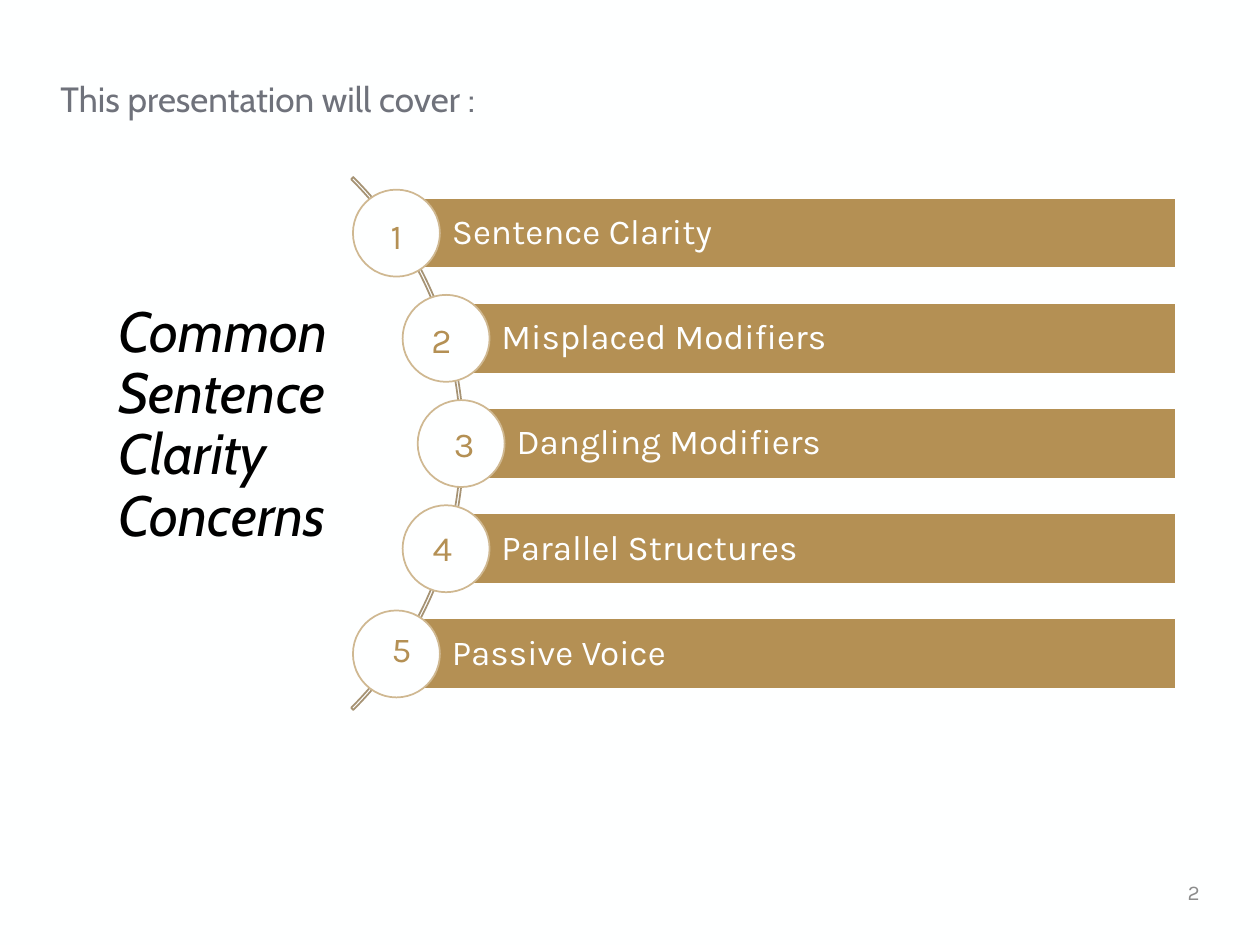
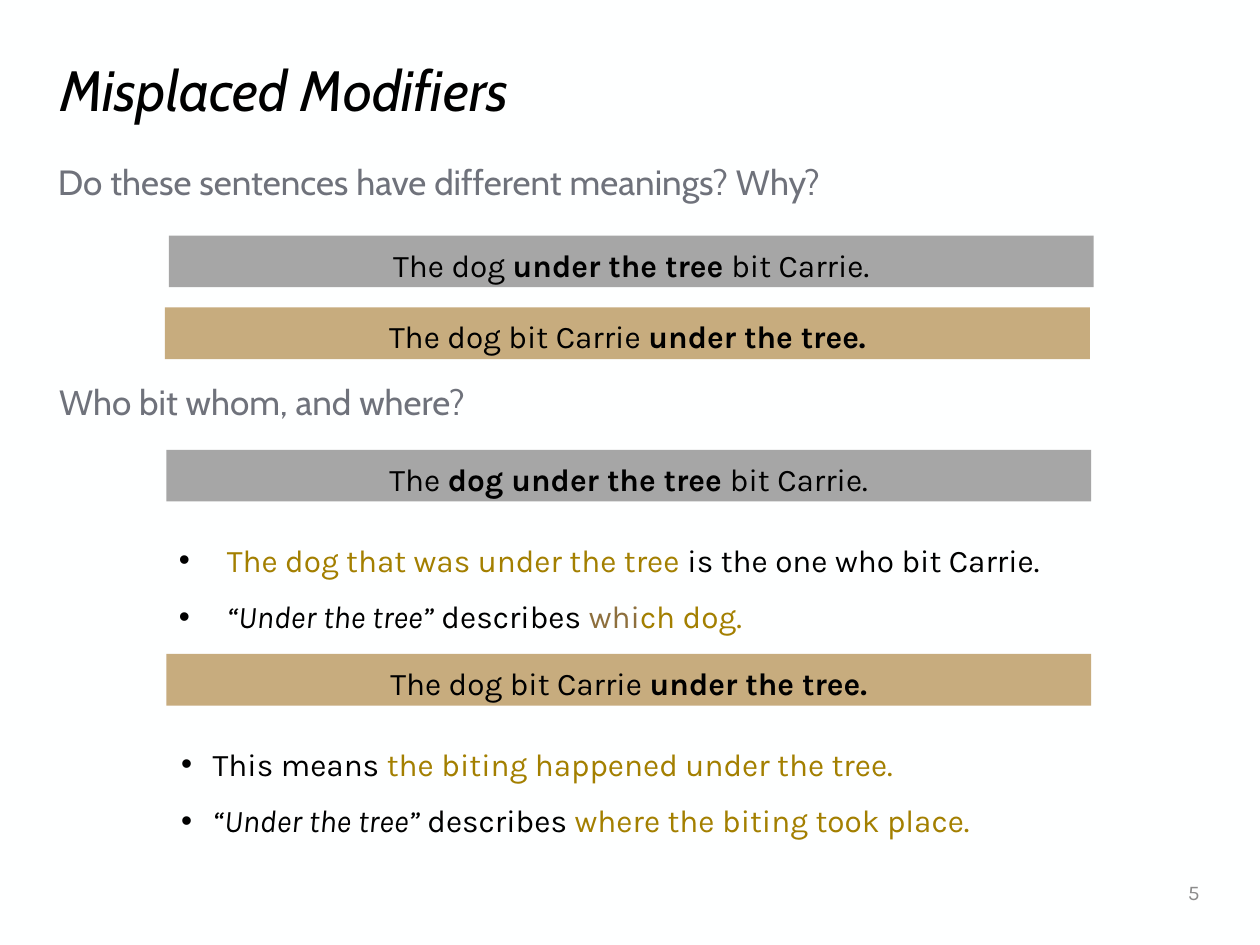
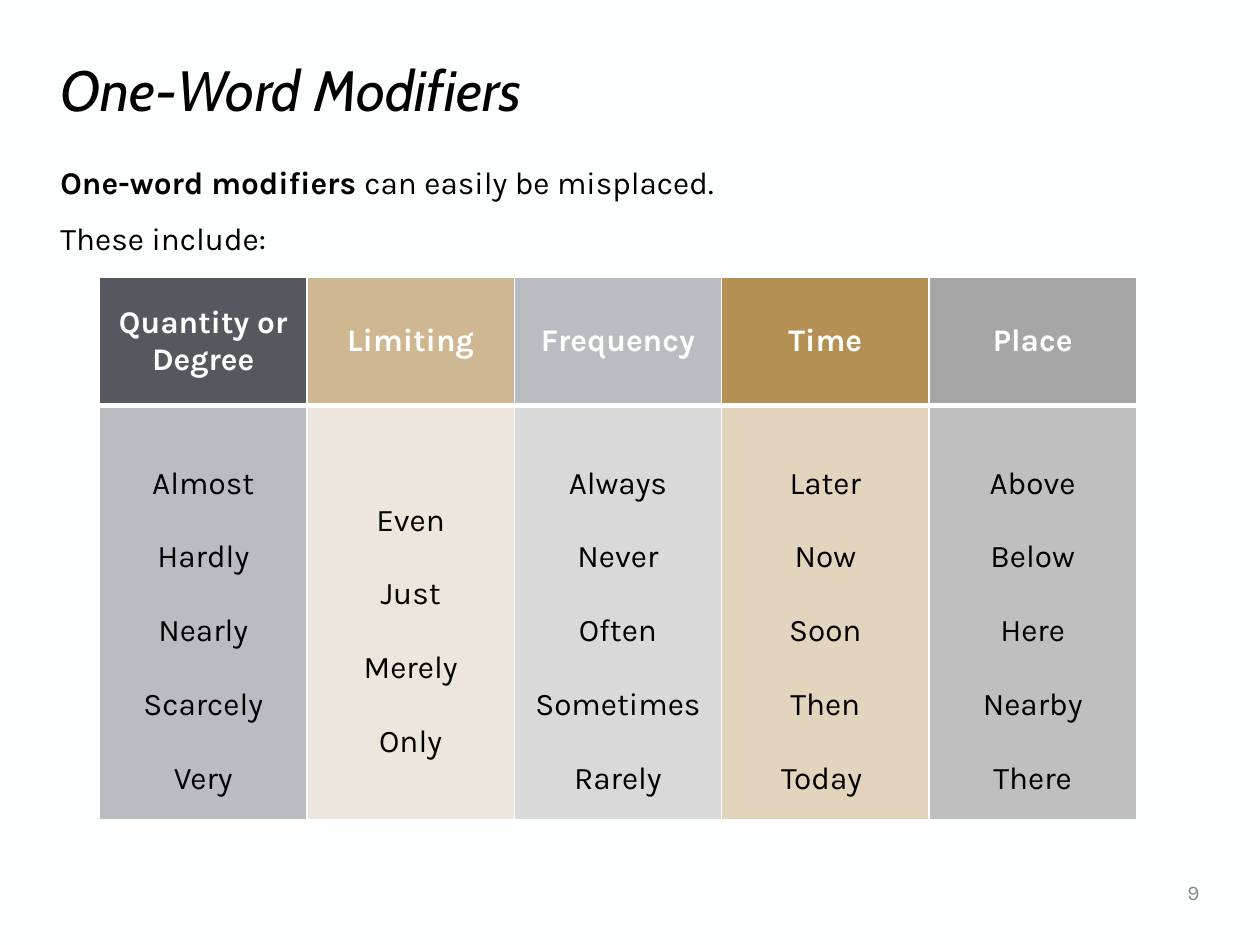
from dataclasses import dataclass
from math import sqrt

from lxml.etree import SubElement
from pptx import Presentation
from pptx.dml.color import RGBColor
from pptx.enum.shapes import MSO_SHAPE
from pptx.enum.text import MSO_ANCHOR, MSO_AUTO_SIZE, PP_ALIGN
from pptx.oxml import parse_xml
from pptx.oxml.ns import nsdecls, qn
from pptx.util import Inches, Pt


@dataclass(frozen=True)
class Theme:
    heading_font: str = "Cabin"
    text_font: str = "Karla"
    paper: str = "FEFFFF"
    ink: str = "000000"
    slate: str = "6F727B"
    footer: str = "8C8C8C"
    gold: str = "B49054"
    pale_gold: str = "CFB891"
    sand: str = "C7AC7E"
    grey: str = "A6A6A6"
    arc: str = "A69374"
    accent: str = "A37F00"
    brown: str = "8D6F3D"
    title_size: float = 32.4
    lead_size: float = 20
    text_size: float = 18
    footer_size: float = 12


THEME = Theme()
TITLE_BOX = (0.38, 0.42, 9.24, 0.64)
BOLD = {"bold": True}
ITALIC = {"italic": True}
ACCENT = {"color": THEME.accent}

# Looks of the recurring kinds of paragraph
TITLE = dict(font=THEME.heading_font, size=THEME.title_size, italic=True, spacing=0.9)
LEAD = dict(font=THEME.heading_font, size=THEME.lead_size, color=THEME.slate, spacing=0.9)
TEXT = dict(font=THEME.text_font, size=THEME.text_size)
LABEL = dict(font=THEME.text_font, size=THEME.lead_size)


# ---- Shared helpers ----
def style_font(font, color=None, bold=None, italic=None):
    if color:
        font.color.rgb = RGBColor.from_string(color)
    if bold is not None:
        font.bold = bold
    if italic is not None:
        font.italic = italic


def set_bullet(para, indent):
    props = para._p.get_or_add_pPr()
    props.set("marL", str(Inches(indent)))
    props.set("indent", str(-Inches(indent)))
    if indent:
        color = SubElement(props, qn("a:buClr"))
        SubElement(color, qn("a:srgbClr"), val=THEME.ink)
        SubElement(props, qn("a:buFont"), typeface="Arial")
        SubElement(props, qn("a:buChar"), char="•")
    else:
        SubElement(props, qn("a:buNone"))


def write(frame, paragraphs, font, size, color=THEME.ink, bold=False, italic=False,
          spacing=1.0, align=PP_ALIGN.LEFT, indent=0):
    """Each paragraph is a string or a list of strings and (text, style) pairs."""
    for index, content in enumerate(paragraphs):
        para = frame.add_paragraph() if index else frame.paragraphs[0]
        para.alignment = align
        para.line_spacing = spacing
        para.space_before = Pt(0)
        set_bullet(para, indent)
        para.font.name = font
        para.font.size = Pt(size)
        style_font(para.font, color, bold, italic)
        for piece in [content] if isinstance(content, str) else content:
            text, style = (piece, {}) if isinstance(piece, str) else piece
            span = para.add_run()
            span.text = text
            style_font(span.font, **style)


def place(shape, box):
    shape.left, shape.top, shape.width, shape.height = map(Inches, box)


def set_frame(frame, anchor=MSO_ANCHOR.TOP):
    frame.word_wrap = True
    frame.auto_size = MSO_AUTO_SIZE.NONE
    frame.vertical_anchor = anchor


def fill_placeholder(shape, box, paragraphs, look, anchor=MSO_ANCHOR.TOP):
    place(shape, box)
    set_frame(shape.text_frame, anchor)
    write(shape.text_frame, paragraphs, **look)


def add_text(page, box, paragraphs, look, anchor=MSO_ANCHOR.TOP):
    frame = page.shapes.add_textbox(*map(Inches, box)).text_frame
    set_frame(frame, anchor)
    write(frame, paragraphs, **look)


def add_flat_shape(page, kind, box, fill=None, line=None):
    shape = page.shapes.add_shape(kind, *map(Inches, box))
    shape.shadow.inherit = False
    if fill:
        shape.fill.solid()
        shape.fill.fore_color.rgb = RGBColor.from_string(fill)
    else:
        shape.fill.background()
    if line:
        shape.line.color.rgb = RGBColor.from_string(line)
        shape.line.width = Pt(1)
    else:
        shape.line.fill.background()
    return shape


def add_page(deck, layout, title, number, title_box=TITLE_BOX):
    page = deck.slides.add_slide(deck.slide_layouts.get_by_name(layout))
    fill_placeholder(page.shapes.title, title_box, [title], TITLE, MSO_ANCHOR.MIDDLE)
    add_text(page, (8.42, 6.88, 1.2, 0.4), [number],
             dict(font=THEME.text_font, size=THEME.footer_size, color=THEME.footer,
                  align=PP_ALIGN.RIGHT), MSO_ANCHOR.MIDDLE)
    return page


# ---- Overview ----
def add_topic_arc(page, center_x, center_y, radius, right, topics):
    """Bars start on an arc, each headed by a numbered circle."""
    pitch, bar_height, circle = 0.835, 0.56, 0.69
    outer = radius + 0.02
    arc = add_flat_shape(page, MSO_SHAPE.BLOCK_ARC,
                         (center_x - outer, center_y - outer, 2 * outer, 2 * outer),
                         line=THEME.arc)
    for index, value in enumerate((189, 27, 0.004)):
        arc.adjustments[index] = value

    for index, (topic, shift_x, shift_y) in enumerate(topics):
        rise = (index - (len(topics) - 1) / 2) * pitch
        x, y = center_x + sqrt(radius ** 2 - rise ** 2), center_y + rise
        bar = add_flat_shape(page, MSO_SHAPE.RECTANGLE,
                             (x, y - bar_height / 2, right - x, bar_height),
                             THEME.gold, THEME.paper)
        set_frame(bar.text_frame, MSO_ANCHOR.MIDDLE)
        bar.text_frame.margin_left = Inches(0.44)
        write(bar.text_frame, [topic], **LABEL, color=THEME.paper, spacing=0.9)
        left, top = x - circle / 2, y - circle / 2
        add_flat_shape(page, MSO_SHAPE.OVAL, (left, top, circle, circle),
                       THEME.paper, THEME.pale_gold)
        add_text(page, (left + shift_x, top + shift_y, 0.34, 0.44), [str(index + 1)],
                 dict(LABEL, color=THEME.gold))


def build_overview(deck):
    page = add_page(deck, "Title and Content", "Common Sentence Clarity Concerns", "2",
                    (0.84, 3.06, 2.15, 0.64))
    fill_placeholder(page.placeholders[1], (0.38, 0.6, 9.25, 0.4),
                     ["This presentation will cover :"], LEAD)
    # Topic, then the offset of its number inside the circle
    add_topic_arc(page, 0.69, 3.52, 2.97, 9.33, [
        ("Sentence Clarity", 0.2, 0.15),
        ("Misplaced Modifiers", 0.13, 0.14),
        ("Dangling Modifiers", 0.19, 0.13),
        ("Parallel Structures", 0.14, 0.12),
        ("Passive Voice", 0.21, 0.09),
    ])


# ---- Misplaced modifiers ----
def build_misplaced(deck):
    page = add_page(deck, "Two Content", "Misplaced Modifiers", "5")
    fill_placeholder(page.placeholders[1], (0.36, 1.22, 9.25, 0.48),
                     ["Do these sentences have different meanings? Why?"],
                     dict(LEAD, spacing=1.0))
    add_text(page, (0.37, 3.01, 9.25, 0.4), ["Who bit whom, and where?"], LEAD)

    # Example sentences
    bit_under = ["The dog bit Carrie ", ("under the tree.", BOLD)]
    examples = [
        (1.34, 1.87, THEME.grey, ["The dog ", ("under the tree ", BOLD), "bit Carrie."]),
        (1.31, 2.44, THEME.sand, bit_under),
        (1.32, 3.57, THEME.grey, ["The ", ("dog under the tree ", BOLD), "bit Carrie."]),
        (1.32, 5.19, THEME.sand, bit_under),
    ]
    for left, top, fill, sentence in examples:
        bar = add_flat_shape(page, MSO_SHAPE.RECTANGLE, (left, top, 7.34, 0.41), fill)
        set_frame(bar.text_frame)
        write(bar.text_frame, [sentence], **TEXT, spacing=1.1, align=PP_ALIGN.CENTER)

    # Explanations
    quote = ("“Under the tree”", ITALIC)
    fill_placeholder(page.placeholders[2], (1.32, 4.09, 7.35, 1), [
        [("The dog that was under the tree ", ACCENT), "is the one who bit Carrie."],
        [quote, " describes ", ("whi", {"color": THEME.brown}), ("ch dog.", ACCENT)],
    ], dict(TEXT, spacing=1.5, indent=0.38))
    add_text(page, (1.34, 5.71, 7.34, 0.95), [
        ["This means ", ("the biting happened under the tree.", ACCENT)],
        [quote, " describes ", ("where the biting took place.", ACCENT)],
    ], dict(TEXT, spacing=1.5, indent=0.25))


# ---- One-word modifiers ----
def set_borders(cell, **widths):
    props = cell._tc.get_or_add_tcPr()
    for index, side in enumerate("LRTB"):
        props.insert(index, parse_xml(
            f'<a:ln{side} {nsdecls("a")} w="{Pt(widths.get(side, 1))}"><a:solidFill>'
            f'<a:srgbClr val="{THEME.paper}"/></a:solidFill></a:ln{side}>'))


def fill_cell(cell, fill, paragraphs, **look):
    cell.fill.solid()
    cell.fill.fore_color.rgb = RGBColor.from_string(fill)
    cell.vertical_anchor = MSO_ANCHOR.MIDDLE
    cell.margin_left = cell.margin_right = Inches(0.07)
    cell.margin_top = cell.margin_bottom = Inches(0.04)
    write(cell.text_frame, paragraphs, **TEXT, align=PP_ALIGN.CENTER, **look)


def add_modifier_table(page, box, columns):
    table = page.shapes.add_table(2, len(columns), *map(Inches, box)).table
    table.horz_banding = False
    table.rows[0].height = Inches(1.02)
    table.rows[1].height = Inches(box[3] - 1.02)
    for index, (heading, head_fill, body_fill, words) in enumerate(columns):
        head, body = table.cell(0, index), table.cell(1, index)
        fill_cell(head, head_fill, [heading], color=THEME.paper, bold=True)
        fill_cell(body, body_fill, words, spacing=2.0)
        set_borders(head, B=3)
        set_borders(body, T=3)


def build_one_word(deck):
    page = add_page(deck, "Title and Content", "One-Word Modifiers", "9")
    fill_placeholder(page.placeholders[1], (0.38, 1.09, 8.04, 1.23), [
        [("One-word modifiers ", BOLD), "can easily be misplaced."],
        "These include:",
    ], dict(TEXT, spacing=1.5))
    add_modifier_table(page, (0.79, 2.2, 8.23, 4.31), [
        ("Quantity or Degree", "55585F", "B9BCC1",
         ["Almost", "Hardly", "Nearly", "Scarcely", "Very"]),
        ("Limiting", THEME.pale_gold, "EDE6DC", ["Even", "Just", "Merely", "Only"]),
        ("Frequency", "B9BCC1", "D9D9D9",
         ["Always", "Never", "Often", "Sometimes", "Rarely"]),
        ("Time", THEME.gold, "E2D4BD", ["Later", "Now", "Soon", "Then", "Today "]),
        ("Place", THEME.grey, "BFBFBF", ["Above", "Below", "Here", "Nearby", "There"]),
    ])


def main():
    deck = Presentation()
    deck.slide_width, deck.slide_height = Inches(10), Inches(7.5)
    background = deck.slide_master.background.fill
    background.solid()
    background.fore_color.rgb = RGBColor.from_string(THEME.paper)
    build_overview(deck)
    build_misplaced(deck)
    build_one_word(deck)
    deck.save("out.pptx")


if __name__ == "__main__":
    main()
